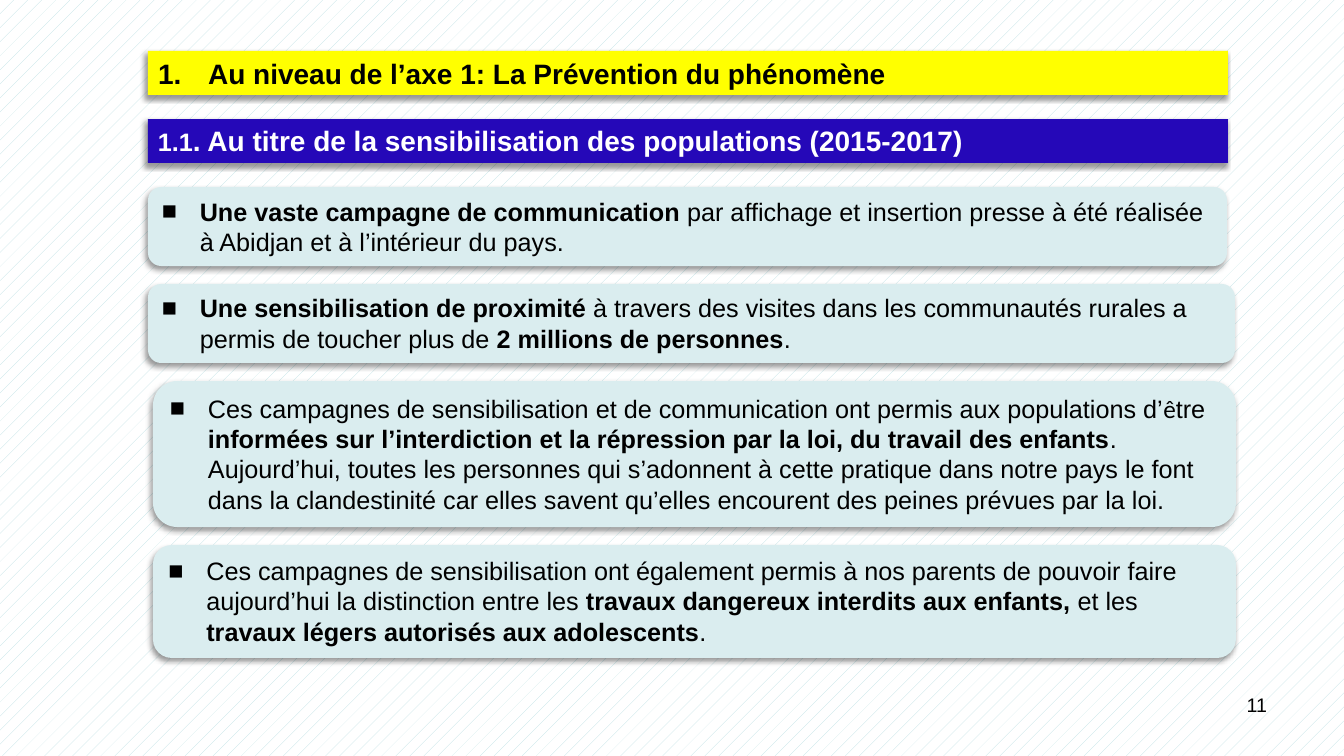
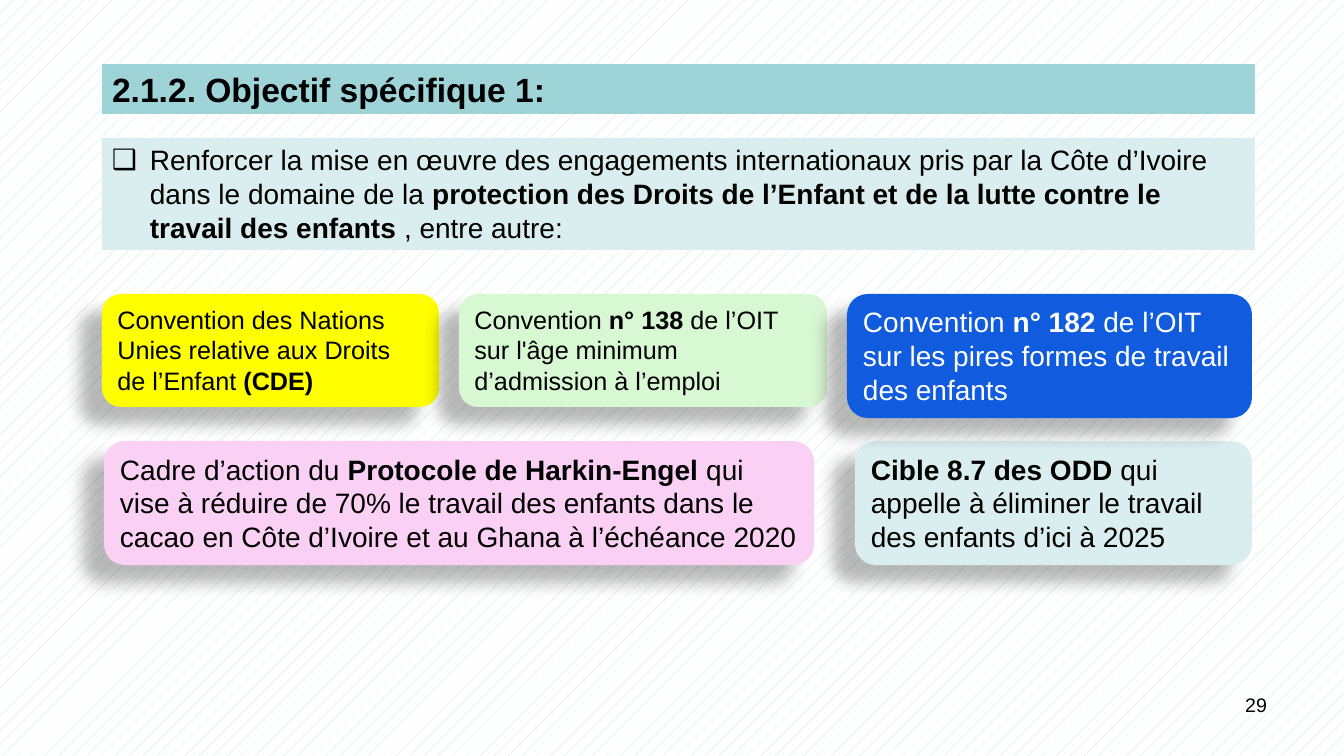
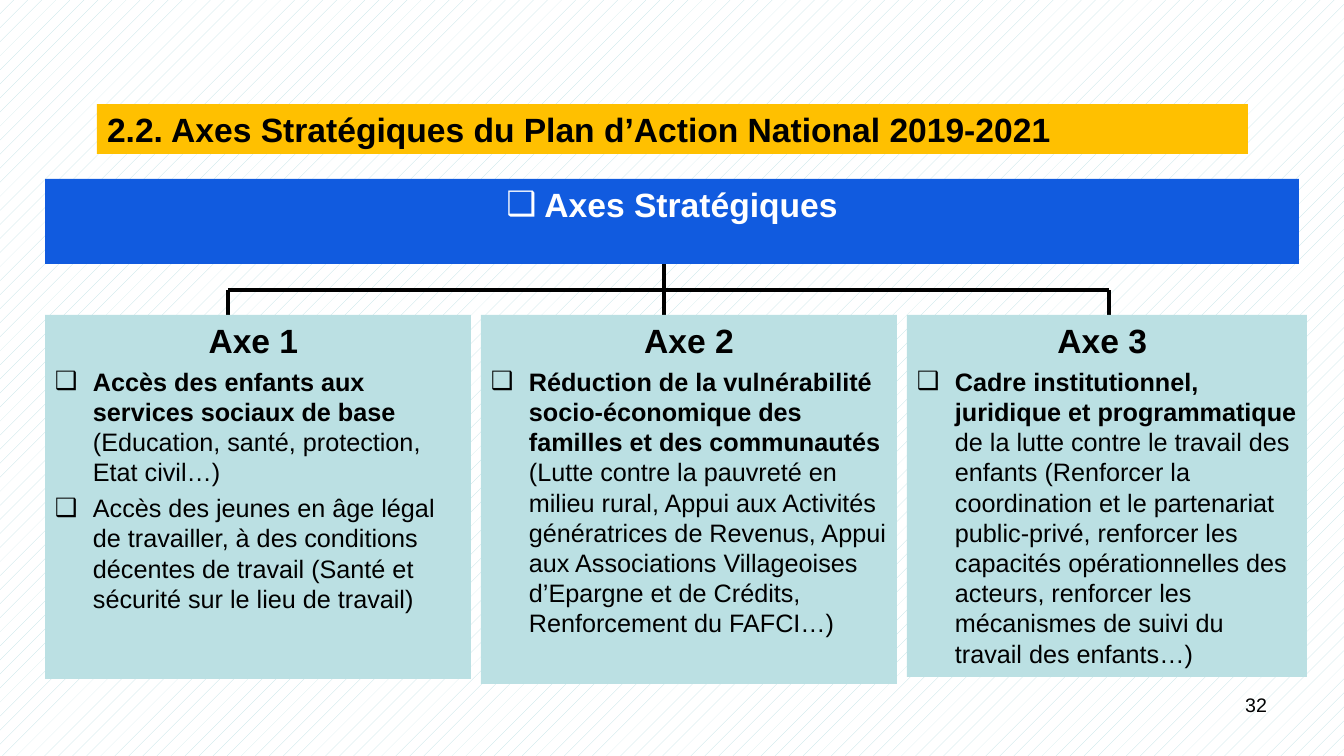
from dataclasses import dataclass

from lxml.etree import SubElement
from pptx import Presentation
from pptx.dml.color import RGBColor
from pptx.enum.dml import MSO_PATTERN
from pptx.enum.shapes import MSO_CONNECTOR, MSO_SHAPE
from pptx.enum.text import MSO_ANCHOR, MSO_AUTO_SIZE, PP_ALIGN
from pptx.oxml.ns import qn
from pptx.util import Emu, Pt

EMU_PER_PX = 914400 / 100.8
SQUARE = "■"
CHECKBOX = "❑"


def px(length):
    return Emu(round(length * EMU_PER_PX))


@dataclass(frozen=True)
class Shadow:
    """Blur and distance in points, opacity in percent, direction in degrees."""
    opacity: int
    blur: float
    distance: float
    direction: int


@dataclass(frozen=True)
class Theme:
    font: str = "Arial"
    accent_font: str = "Calibri"
    black: str = "000000"
    white: str = "FFFFFF"
    yellow: str = "FFFF00"
    amber: str = "FFC000"
    indigo: str = "2508B8"
    blue: str = "115BDF"
    green: str = "D7F8D2"
    pink: str = "FAD0F4"
    teal: str = "9ED3D7"
    light_teal: str = "BBE0E3"
    pale_teal: str = "DAEDEF"
    heading: int = 24
    large: int = 20
    body: int = 18
    footer: int = 14
    space: int = 4
    indent: int = 38
    line: float = 2.25
    tight_shadow: Shadow = Shadow(40, 4, 3, 135)
    deep_shadow: Shadow = Shadow(28, 11.8, 19.7, 141)


THEME = Theme()


@dataclass(frozen=True)
class Span:
    """A piece of text whose size or font differs from its paragraph."""
    text: str
    size: int = None
    font: str = None


def write(shape, *pieces, size=THEME.body, color=THEME.black, bold=False,
          align=PP_ALIGN.LEFT, bullet=None, indent=THEME.indent, space=0):
    """Add a paragraph; asterisks in a piece switch bold on and off."""
    frame = shape.text_frame
    paragraph = frame.paragraphs[0]
    if paragraph.runs:
        paragraph = frame.add_paragraph()
    paragraph.alignment = align
    paragraph.space_before = Pt(space)
    if bullet:
        add_bullet(paragraph, bullet, indent)
    for piece in pieces:
        span = piece if isinstance(piece, Span) else Span(piece)
        for index, text in enumerate(span.text.split("*")):
            if text:
                run = paragraph.add_run()
                run.text = text
                run.font.name = span.font or THEME.font
                run.font.size = Pt(span.size or size)
                run.font.bold = bold != (index % 2 == 1)
                run.font.color.rgb = RGBColor.from_string(color)


def add_bullet(paragraph, bullet, indent):
    properties = paragraph._p.get_or_add_pPr()
    properties.set("marL", str(px(indent)))
    properties.set("indent", str(-px(indent)))
    SubElement(properties, qn("a:buFont"), typeface=THEME.font)
    if bullet == "1.":
        SubElement(properties, qn("a:buAutoNum"), type="arabicPeriod")
    else:
        SubElement(properties, qn("a:buChar"), char=bullet)


def cast_shadow(shape, shadow):
    effects = shape._element.spPr.find(qn("a:effectLst"))
    outer = SubElement(effects, qn("a:outerShdw"), blurRad=str(Pt(shadow.blur)),
                       dist=str(Pt(shadow.distance)), dir=str(shadow.direction * 60000),
                       algn="tr", rotWithShape="0")
    color = SubElement(outer, qn("a:srgbClr"), val=THEME.black)
    SubElement(color, qn("a:alpha"), val=str(shadow.opacity * 1000))


class Deck:
    def __init__(self, theme):
        self.theme = theme
        self.slide = None
        self.presentation = Presentation()
        self.presentation.slide_width = px(1344)
        self.presentation.slide_height = px(756)
        fill = self.presentation.slide_master.background.fill
        fill.patterned()
        fill.pattern = MSO_PATTERN.PERCENT_5
        fill.fore_color.rgb = RGBColor.from_string(theme.light_teal)
        fill.back_color.rgb = RGBColor.from_string(theme.white)

    def start_slide(self, number):
        layout = self.presentation.slide_layouts.get_by_name("Title Only")
        self.slide = self.presentation.slides.add_slide(layout)
        footer = self.slide.shapes.add_textbox(px(964), px(688), px(313), px(52))
        footer.text_frame.word_wrap = True
        write(footer, str(number), size=self.theme.footer, align=PP_ALIGN.RIGHT)

    def style(self, shape, fill, shadow):
        shape.fill.solid()
        shape.fill.fore_color.rgb = RGBColor.from_string(fill)
        shape.line.fill.background()
        shape.shadow.inherit = False
        if shadow:
            cast_shadow(shape, shadow)
        frame = shape.text_frame
        frame.word_wrap = True
        frame.auto_size = MSO_AUTO_SIZE.NONE
        frame.vertical_anchor = MSO_ANCHOR.TOP

    def title(self, text, left, top, width, height, fill, shadow=None, **text_format):
        shape = self.slide.shapes.title
        shape.left, shape.top = px(left), px(top)
        shape.width, shape.height = px(width), px(height)
        self.style(shape, fill, shadow)
        write(shape, text, bold=True, **text_format)

    def box(self, left, top, width, height, fill, shadow=None, rounded=False):
        kind = MSO_SHAPE.ROUNDED_RECTANGLE if rounded else MSO_SHAPE.RECTANGLE
        shape = self.slide.shapes.add_shape(kind, px(left), px(top), px(width), px(height))
        self.style(shape, fill, shadow)
        return shape

    def card_row(self, left, top, gap, cards):
        """Lay cards out from left to right; each is width, height, fill, text, format."""
        for width, height, fill, text, text_format in cards:
            card = self.box(left, top, width, height, fill, self.theme.deep_shadow, rounded=True)
            write(card, text, **text_format)
            left += width + gap

    def line(self, start_x, start_y, end_x, end_y):
        connector = self.slide.shapes.add_connector(
            MSO_CONNECTOR.STRAIGHT, px(start_x), px(start_y), px(end_x), px(end_y))
        connector.line.color.rgb = RGBColor.from_string(self.theme.black)
        connector.line.width = Pt(self.theme.line)
        SubElement(connector._element.spPr, qn("a:effectLst"))


def build_prevention(deck):
    theme = deck.theme
    deck.start_slide(11)
    deck.title("Au niveau de l’axe 1: La Prévention du phénomène", 148, 51, 1080, 44,
               theme.yellow, theme.tight_shadow, size=theme.large, bullet="1.", indent=50)
    subtitle = deck.box(148, 119, 1080, 44, theme.indigo, theme.tight_shadow)
    write(subtitle, Span("1.1", size=theme.body),
          ". Au titre de la sensibilisation des populations (2015-2017)",
          size=theme.large, color=theme.white, bold=True)

    results = [
        (148, 1079, 79, [
            "*Une vaste campagne de communication *par affichage et insertion presse "
            "à été réalisée à Abidjan et à l’intérieur du pays."]),
        (148, 1087, 79, [
            "*Une sensibilisation de proximité *à travers des visites dans les communautés "
            "rurales a permis de toucher plus de *2 millions de personnes*."]),
        (153, 1083, 146, [
            "Ces campagnes de sensibilisation et de communication ont permis aux populations d’",
            Span("ê", font=theme.accent_font),
            "tre *informées sur l’interdiction et la répression par la loi, du travail des "
            "enfants*. Aujourd’hui, toutes les personnes qui s’adonnent à cette pratique dans "
            "notre pays le font dans la clandestinité car elles savent qu’elles encourent des "
            "peines prévues par la loi."]),
        (153, 1083, 113, [
            "Ces campagnes de sensibilisation ont également permis à nos parents de pouvoir "
            "faire aujourd’hui la distinction entre les *travaux dangereux interdits aux "
            "enfants, *et les *travaux légers autorisés aux adolescents*."]),
    ]
    top = 187
    for left, width, height, pieces in results:
        result = deck.box(left, top, width, height, theme.pale_teal,
                          theme.tight_shadow, rounded=True)
        write(result, *pieces, bullet=SQUARE)
        top += height + 18


def build_objective(deck):
    theme = deck.theme
    deck.start_slide(29)
    deck.title("2.1.2. Objectif spécifique 1:", 102, 64, 1153, 50, theme.teal,
               size=theme.heading)
    objective = deck.box(102, 138, 1153, 112, theme.pale_teal)
    write(objective,
          "Renforcer la mise en œuvre des engagements internationaux pris par la Côte d’Ivoire "
          "dans le domaine de la *protection des Droits de l’Enfant et de la lutte contre le "
          "travail des enfants *, entre autre:", size=theme.large, bullet=CHECKBOX)

    large = {"size": theme.large}
    deck.card_row(104, 441, 41, [
        (710, 124, theme.pink,
         "Cadre d’action du *Protocole de Harkin-Engel *qui vise à réduire de 70% le travail "
         "des enfants dans le cacao en Côte d’Ivoire et au Ghana à l’échéance 2020", large),
        (397, 124, theme.pale_teal,
         "*Cible 8.7 des ODD *qui appelle à éliminer le travail des enfants d’ici à 2025", large),
    ])
    deck.card_row(102, 294, 20, [
        (337, 113, theme.yellow,
         "Convention des Nations Unies relative aux Droits de l’Enfant *(CDE)*", {}),
        (368, 113, theme.green,
         "Convention *n° 138 *de l’OIT sur l'âge minimum d’admission à l’emploi", {}),
        (405, 124, theme.blue,
         "Convention *n° 182* de l’OIT sur les pires formes de travail des enfants",
         {**large, "color": theme.white}),
    ])


def build_axes(deck):
    theme = deck.theme
    deck.start_slide(32)
    deck.title("2.2. Axes Stratégiques du Plan d’Action National 2019-2021",
               97, 104, 1151, 50, theme.amber, size=theme.heading)

    branches = (228, 664, 1109)
    branch_top, axis_top, gap = 290, 315, 10
    for x in branches:
        deck.line(x, axis_top, x, branch_top)
    deck.line(branches[1], branch_top, branches[1], 259)
    deck.line(branches[0], branch_top, branches[-1], branch_top)

    header = deck.box(45, 179, 1254, 85, theme.blue)
    write(header, "Axes Stratégiques", size=theme.heading, color=theme.white, bold=True,
          align=PP_ALIGN.CENTER, bullet=CHECKBOX)

    axes = [
        (426, 364, "Axe 1 ", [
            "*Accès des enfants aux services sociaux de base *(Education, santé, protection, "
            "Etat civil…)",
            "Accès des jeunes en âge légal de travailler, à des conditions décentes de travail "
            "(Santé et sécurité sur le lieu de travail)"]),
        (416, 369, "Axe 2", [
            "*Réduction de la vulnérabilité socio-économique des familles et des communautés *"
            "(Lutte contre la pauvreté en milieu rural, Appui aux Activités génératrices de "
            "Revenus, Appui aux Associations Villageoises d’Epargne et de Crédits, "
            "Renforcement du FAFCI…)"]),
        (400, 362, "Axe 3 ", [
            "*Cadre institutionnel, juridique et programmatique *de la lutte contre le travail "
            "des enfants (Renforcer la coordination et le partenariat public-privé, renforcer "
            "les capacités opérationnelles des acteurs, renforcer les mécanismes de suivi du "
            "travail des enfants…)"]),
    ]
    left = 45
    for width, height, name, actions in axes:
        axis = deck.box(left, axis_top, width, height, theme.light_teal)
        write(axis, name, size=theme.heading, bold=True, align=PP_ALIGN.CENTER,
              space=theme.space)
        for action in actions:
            write(axis, action, bullet=CHECKBOX, space=theme.space)
        left += width + gap


def main():
    deck = Deck(THEME)
    build_prevention(deck)
    build_objective(deck)
    build_axes(deck)
    deck.presentation.save("out.pptx")


if __name__ == "__main__":
    main()
